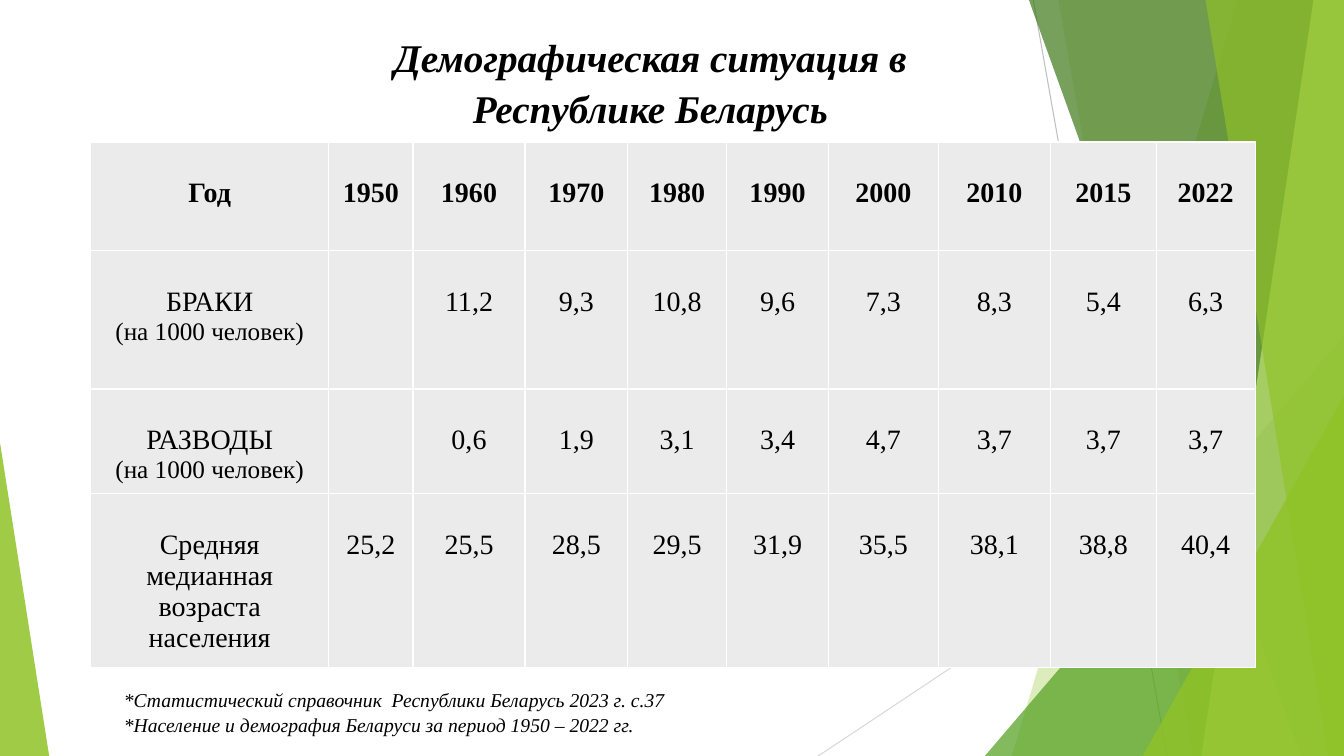
from lxml import etree
from pptx import Presentation
from pptx.dml.color import RGBColor
from pptx.enum.shapes import MSO_CONNECTOR, MSO_SHAPE
from pptx.enum.text import MSO_ANCHOR, PP_ALIGN
from pptx.oxml.ns import qn
from pptx.util import Cm, Pt

STRAIGHT = MSO_CONNECTOR.STRAIGHT
TRIANGLE = MSO_SHAPE.ISOSCELES_TRIANGLE
CENTER = PP_ALIGN.CENTER
LEFT = PP_ALIGN.LEFT
MIDDLE = MSO_ANCHOR.MIDDLE
TOP = MSO_ANCHOR.TOP

FONT = "Times New Roman"
COLORS = {
    "text": "000000",
    "cell": "EBEBEB",
    "line": "BFBFBF",
    "pale_line": "D9D9D9",
    "lime": "90C226",
    "light_lime": "C0E474",
    "green": "54A021",
    "dark_green": "3F7819",
}
SLIDE_W, SLIDE_H = 33.87, 19.05

TITLE = "Демографическая ситуация в Республике Беларусь"
SOURCES = (
    "*Статистический справочник  Республики Беларусь 2023 г. с.37\n"
    "*Население и демография Беларуси за период 1950 – 2022 гг."
)
ROWS = [
    ["Год", "1950", "1960", "1970", "1980", "1990", "2000", "2010", "2015", "2022"],
    ["БРАКИ\n(на 1000 человек)", "", "11,2", "9,3", "10,8", "9,6", "7,3", "8,3", "5,4", "6,3"],
    ["РАЗВОДЫ\n(на 1000 человек)", "", "0,6", "1,9", "3,1", "3,4", "4,7", "3,7", "3,7", "3,7"],
    ["Средняя медианная возраста населения",
     "25,2", "25,5", "28,5", "29,5", "31,9", "35,5", "38,1", "38,8", "40,4"],
]
COL_WIDTHS = [5.99, 2.13, 2.82, 2.59, 2.49, 2.57, 2.77, 2.82, 2.67, 2.49]
ROW_HEIGHTS = [2.74, 3.48, 2.64, 4.39]


def rgb(name):
    return RGBColor.from_string(COLORS[name])


def format_paragraph(p, size, align=CENTER, bold=False, italic=False):
    p.alignment = align
    for r in p.runs:
        r.font.name = FONT
        r.font.size = Pt(size)
        r.font.bold = bold
        r.font.italic = italic
        r.font.color.rgb = rgb("text")


def fill_glass(sp, color, opacity):
    """Give a shape a translucent fill, without outline or shadow."""
    sp.shadow.inherit = False
    sp.line.fill.background()
    sp.fill.solid()
    sp.fill.fore_color.rgb = rgb(color)
    clr = sp.fill._xPr.find(".//" + qn("a:srgbClr"))
    etree.SubElement(clr, qn("a:alpha")).set("val", str(opacity * 1000))


def add_thin_line(slide, x1, y1, x2, y2, color):
    line = slide.shapes.add_connector(STRAIGHT, Cm(x1), Cm(y1), Cm(x2), Cm(y2))
    line.line.color.rgb = rgb(color)
    line.line.width = Pt(0.75)
    etree.SubElement(line._element.spPr, qn("a:effectLst"))


def add_ribbon(slide, top_x, bottom_x, color, opacity):
    """Fill the area from a slanted left edge to the right side of the slide."""
    builder = slide.shapes.build_freeform(Cm(top_x), 0)
    builder.add_line_segments([
        (Cm(SLIDE_W), 0), (Cm(SLIDE_W), Cm(SLIDE_H)), (Cm(bottom_x), Cm(SLIDE_H)),
    ])
    fill_glass(builder.convert_to_shape(), color, opacity)


def add_corner(slide, left, width, height, apex, color, opacity):
    """Add a right triangle that stands on the bottom edge of the slide."""
    sp = slide.shapes.add_shape(
        TRIANGLE, Cm(left), Cm(SLIDE_H - height), Cm(width), Cm(height))
    sp.adjustments[0] = apex
    fill_glass(sp, color, opacity)


def add_decoration(slide):
    add_thin_line(slide, 26.04, 0, 29.41, SLIDE_H, "line")
    add_thin_line(slide, SLIDE_W, 10.24, 20.62, SLIDE_H, "pale_line")
    add_ribbon(slide, 31.19, 25.5, "lime", 30)
    add_ribbon(slide, 26.67, 30.05, "lime", 20)
    add_corner(slide, 24.82, 9.05, 10.59, 1, "green", 72)
    add_ribbon(slide, 25.93, 32.79, "dark_green", 70)
    add_ribbon(slide, 33.1, 30.28, "light_lime", 70)
    add_ribbon(slide, 30.38, 33.48, "lime", 65)
    add_corner(slide, 28.8, 5.07, 9.07, 1, "lime", 80)
    add_corner(slide, 0, 1.24, 7.9, 0, "lime", 85)


def add_demography_table(slide):
    frame = slide.shapes.add_table(
        len(ROWS), len(COL_WIDTHS), Cm(2.29), Cm(3.58),
        Cm(sum(COL_WIDTHS)), Cm(sum(ROW_HEIGHTS)))
    table = frame.table
    table.horz_banding = False
    for column, width in zip(table.columns, COL_WIDTHS):
        column.width = Cm(width)
    for i, (texts, height) in enumerate(zip(ROWS, ROW_HEIGHTS)):
        table.rows[i].height = Cm(height)
        for j, text in enumerate(texts):
            cell = table.cell(i, j)
            cell.fill.solid()
            cell.fill.fore_color.rgb = rgb("cell")
            cell.margin_top = Cm(0.9)
            cell.text_frame.text = text
            for n, p in enumerate(cell.text_frame.paragraphs):
                format_paragraph(p, 18 if n else 20, bold=i == 0)


def set_text(sp, text, size, anchor, **style):
    tf = sp.text_frame
    tf.word_wrap = True
    tf.vertical_anchor = anchor
    tf.text = text
    for p in tf.paragraphs:
        p.line_spacing = 1.07
        format_paragraph(p, size, italic=True, **style)


def main():
    prs = Presentation()
    prs.slide_width, prs.slide_height = Cm(SLIDE_W), Cm(SLIDE_H)
    slide = prs.slides.add_slide(prs.slide_layouts[5])

    add_decoration(slide)
    add_demography_table(slide)

    sources = slide.shapes.add_textbox(Cm(2.87), Cm(17.17), Cm(28.58), Cm(1.45))
    set_text(sources, SOURCES, 14, TOP, align=LEFT)

    title = slide.shapes.title
    title.left, title.top = Cm(7.92), Cm(0.71)
    title.width, title.height = Cm(16.94), Cm(2.64)
    set_text(title, TITLE, 28, MIDDLE, bold=True)

    prs.save("out.pptx")


if __name__ == "__main__":
    main()
